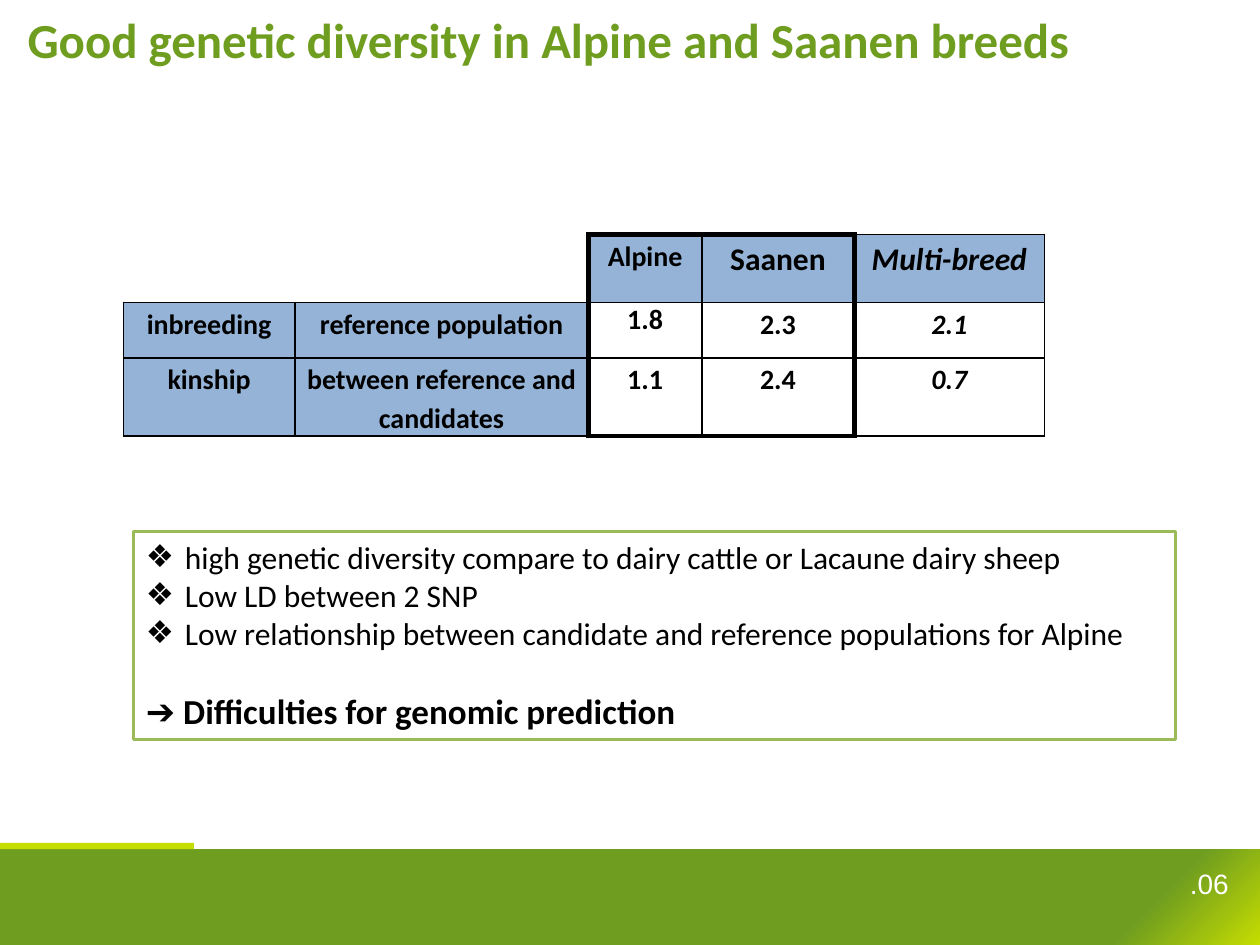
from lxml.etree import SubElement
from pptx import Presentation
from pptx.dml.color import RGBColor
from pptx.enum.shapes import MSO_SHAPE as Shape
from pptx.enum.text import MSO_ANCHOR as Anchor, PP_ALIGN as Align
from pptx.oxml import parse_xml
from pptx.oxml.ns import nsdecls, qn
from pptx.util import Inches, Pt

GREEN, LIME, BLUE, OLIVE = "6F9D20", "C5DD01", "95B3D7", "9BBB59"
BLACK, WHITE = "000000", "FFFFFF"
COLUMNS, ROWS = 100, 75

HEADINGS = ["", "", "Alpine", "Saanen", "Multi-breed"]
BREED_RATES = [
    HEADINGS,
    ["inbreeding", "reference population", "1.8", "2.3", "2.1"],
    ["kinship", "between reference and candidates", "1.1", "2.4", "0.7"],
]
FINDINGS = [
    "high genetic diversity compare to dairy cattle or Lacaune dairy sheep",
    "Low LD between 2 SNP",
    "Low relationship between candidate and reference populations for Alpine",
]


def color(hex_code):
    return RGBColor.from_string(hex_code)


def write(paragraph, text, size=16, font="Calibri", ink=BLACK, bold=False,
          italic=False, align=Align.LEFT, spacing=None, before=None, bullet=None):
    paragraph.alignment = align
    if spacing:
        paragraph.line_spacing = spacing
    if before:
        paragraph.space_before = Pt(before)
    if bullet:
        props = paragraph._p.get_or_add_pPr()
        props.set("marL", str(Inches(0.31)))
        props.set("indent", str(-Inches(0.31)))
        SubElement(props, qn("a:buFont"), typeface="Arial")
        SubElement(props, qn("a:buChar"), char=bullet)
    run = paragraph.add_run()
    run.text = text
    run.font.size, run.font.name = Pt(size), font
    run.font.bold, run.font.italic = bold, italic
    run.font.color.rgb = color(ink)


def draw_border(cell, side, width):
    """Set one side (L, R, T or B) of a cell; zero width hides it."""
    line = SubElement(cell._tc.get_or_add_tcPr(), qn(f"a:ln{side}"), w=str(Pt(width)))
    if width:
        fill = SubElement(line, qn("a:solidFill"))
        SubElement(fill, qn("a:srgbClr"), val=BLACK)
    else:
        SubElement(line, qn("a:noFill"))


def horizontal_width(edge, column):
    if edge == 0 and column < 2:
        return 0
    return 3 if edge in (0, 3) and column in (2, 3) else 1


def vertical_width(edge, row):
    if row == 0 and edge < 2:
        return 0
    return 3 if edge in (2, 4) else 1


class BreedSlide:
    """Style and current slide; places are in columns and rows of the grid."""

    def __init__(self, deck):
        self.unit_x = deck.slide_width / COLUMNS
        self.unit_y = deck.slide_height / ROWS
        self.slide = deck.slides.add_slide(deck.slide_layouts[6])

    def place(self, left, top, width, height):
        return (round(left * self.unit_x), round(top * self.unit_y),
                round(width * self.unit_x), round(height * self.unit_y))

    def panel(self, area, fill, outline=None):
        panel = self.slide.shapes.add_shape(Shape.RECTANGLE, *self.place(*area))
        panel.shadow.inherit = False
        panel.fill.solid()
        panel.fill.fore_color.rgb = color(fill)
        if outline:
            panel.line.color.rgb = color(outline)
            panel.line.width = Pt(2)
        else:
            panel.line.fill.background()
        panel.text_frame.word_wrap = True
        panel.text_frame.vertical_anchor = Anchor.TOP
        return panel

    def corner_glow(self, area, glow, base):
        """Band of the base colour with a glow in its bottom right corner."""
        props = self.panel(area, base)._element.spPr
        stops = "".join(
            f'<a:gs pos="{share * 1000}"><a:srgbClr val="{hue}"/></a:gs>'
            for share, hue in ((0, glow), (11, base), (100, base)))
        gradient = parse_xml(
            f'<a:gradFill {nsdecls("a")} rotWithShape="1"><a:gsLst>{stops}</a:gsLst>'
            '<a:path path="circle"><a:fillToRect l="100000" t="100000"/></a:path>'
            '</a:gradFill>')
        props.replace(props.find(qn("a:solidFill")), gradient)

    def label(self, area, text, **style):
        frame = self.slide.shapes.add_textbox(*self.place(*area)).text_frame
        frame.word_wrap = True
        write(frame.paragraphs[0], text, **style)

    def table(self, area, rows, widths, heights):
        grid = self.slide.shapes.add_table(
            len(rows), len(widths), *self.place(*area)).table
        grid.first_row = grid.horz_banding = False
        for column, width in zip(grid.columns, widths):
            column.width = round(width * self.unit_x)
        for row, height in zip(grid.rows, heights):
            row.height = round(height * self.unit_y)
        for r, texts in enumerate(rows):
            for c, text in enumerate(texts):
                self.table_cell(grid.cell(r, c), r, c, text)

    def table_cell(self, cell, r, c, text):
        draw_border(cell, "L", vertical_width(c, r))
        draw_border(cell, "R", vertical_width(c + 1, r))
        draw_border(cell, "T", horizontal_width(r, c))
        draw_border(cell, "B", horizontal_width(r + 1, c))
        cell.margin_left = cell.margin_right = Inches(0.07)
        cell.margin_top = cell.margin_bottom = 0
        if text and (r == 0 or c < 2):
            cell.fill.solid()
            cell.fill.fore_color.rgb = color(BLUE)
        else:
            cell.fill.background()
        if text:
            write(cell.text_frame.paragraphs[0], text, bold=True, italic=c == 4,
                  size=18 if r == 0 and c > 2 else 16, align=Align.CENTER,
                  spacing=None if (r, c) == (1, 2) else 1.15)


def main():
    deck = Presentation()
    deck.slide_width, deck.slide_height = Inches(10), Inches(7.5)
    page = BreedSlide(deck)

    page.corner_glow((0, 67.4, 100, 7.6), LIME, GREEN)
    page.panel((0, 66.9, 15.4, 0.5), LIME)
    page.label((86.2, 68.3, 12.3, 2.7), ".06", font="Arial", ink=WHITE,
               align=Align.RIGHT)

    page.table((9.8, 18.6, 73.2, 15.8), BREED_RATES,
               widths=[13.6, 23.3, 9, 12.1, 15.1], heights=[5.4, 4.4, 6.2])

    title = page.panel((1.2, 0.3, 96.5, 5.7), WHITE)
    write(title.text_frame.paragraphs[0],
          "Good genetic diversity in Alpine and Saanen breeds",
          size=28, ink=GREEN, bold=True)

    summary = page.panel((10.6, 42.2, 82.7, 16.5), WHITE, OLIVE).text_frame
    for index, finding in enumerate(FINDINGS):
        line = summary.add_paragraph() if index else summary.paragraphs[0]
        write(line, finding, size=18, bullet="❖")
    write(summary.add_paragraph(), "➔ Difficulties for genomic prediction",
          size=20, bold=True, before=22)

    deck.save("out.pptx")


if __name__ == "__main__":
    main()
